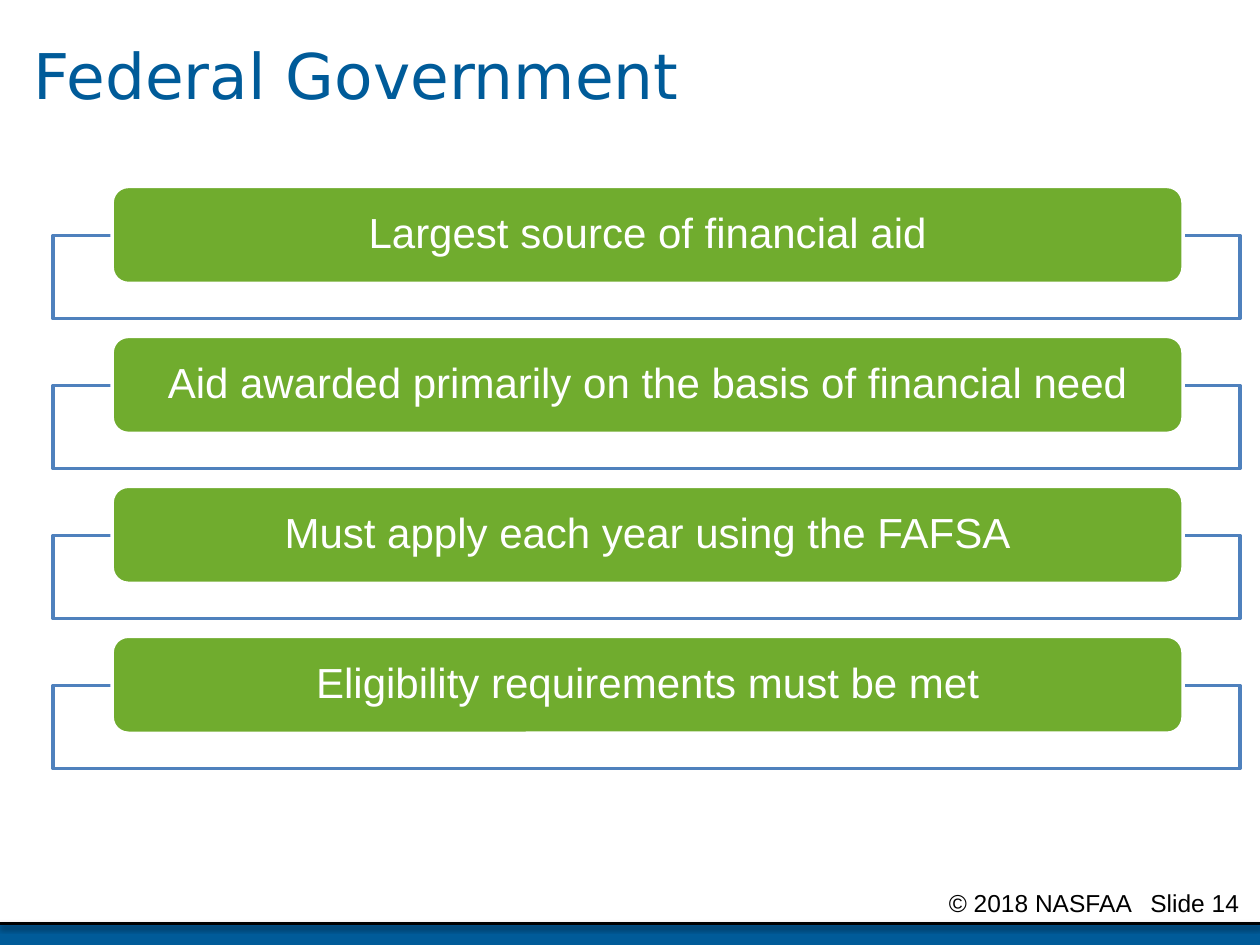
from dataclasses import dataclass

from lxml import etree
from pptx import Presentation
from pptx.dml.color import RGBColor
from pptx.enum.shapes import MSO_CONNECTOR, MSO_SHAPE
from pptx.enum.text import MSO_ANCHOR, PP_ALIGN
from pptx.oxml import parse_xml
from pptx.oxml.ns import nsdecls, qn
from pptx.util import Inches, Pt

RECT, ROUND = MSO_SHAPE.RECTANGLE, MSO_SHAPE.ROUNDED_RECTANGLE
STRAIGHT = MSO_CONNECTOR.STRAIGHT
TOP, MIDDLE = MSO_ANCHOR.TOP, MSO_ANCHOR.MIDDLE
LEFT, CENTER = PP_ALIGN.LEFT, PP_ALIGN.CENTER


@dataclass(frozen=True)
class Theme:
    blue: str = "005B99"
    green: str = "70AC2E"
    frame: str = "4F81BD"
    white: str = "FFFFFF"
    black: str = "000000"
    head: str = "DejaVu Sans"
    body: str = "Arial"
    title: int = 36
    label: int = 24
    foot: int = 14
    rule: int = 2


theme = Theme()


def add_box(kind, x, y, w, h, fill, line=None):
    box = slide.shapes.add_shape(kind, Inches(x), Inches(y), Inches(w), Inches(h))
    box.shadow.inherit = False
    box.fill.solid()
    box.fill.fore_color.rgb = RGBColor.from_string(fill)
    if line:
        box.line.color.rgb = RGBColor.from_string(line)
        box.line.width = Pt(theme.rule)
    else:
        box.line.fill.background()
    return box


def set_text(shape, text, font, size, color, align, anchor, inset, spacing=1.0):
    """Write one paragraph; inset is left, top, right, bottom in inches."""
    frame = shape.text_frame
    left, top, right, bottom = map(Inches, inset)
    layout = {"word_wrap": True, "vertical_anchor": anchor,
              "margin_left": left, "margin_top": top,
              "margin_right": right, "margin_bottom": bottom}
    for name, value in layout.items():
        setattr(frame, name, value)
    para = frame.paragraphs[0]
    para.alignment, para.line_spacing = align, spacing
    run = para.add_run()
    run.text = text
    for name, value in {"name": font, "size": Pt(size)}.items():
        setattr(run.font, name, value)
    run.font.color.rgb = RGBColor.from_string(color)
    return para


deck = Presentation()
deck.slide_width, deck.slide_height = Inches(10), Inches(7.5)
slide = deck.slides.add_slide(deck.slide_layouts[6])

# Footer band, rule and copyright
add_box(RECT, 0, 7.33, 10, 0.2, theme.blue)
rule = slide.shapes.add_connector(STRAIGHT, 0, Inches(7.33), Inches(10), Inches(7.33))
rule.line.color.rgb = RGBColor.from_string(theme.black)
rule.line.width = Pt(theme.rule)
rule.element.spPr.append(parse_xml(
    f'<a:effectLst {nsdecls("a")}>'
    f'<a:outerShdw blurRad="{Pt(3.1)}" dist="{Pt(1.6)}" dir="5400000" rotWithShape="0">'
    f'<a:srgbClr val="{theme.black}"><a:alpha val="38000"/></a:srgbClr>'
    '</a:outerShdw></a:effectLst>'))

foot = slide.shapes.add_textbox(Inches(6.25), Inches(7), Inches(3.75), Inches(0.25))
para = set_text(foot, "© 2018 NASFAA\tSlide 14", theme.body, theme.foot, theme.black,
                LEFT, TOP, (1.28, 0.05, 0.1, 0.05))
tabs = etree.SubElement(para._p.get_or_add_pPr(), qn("a:tabLst"))
etree.SubElement(tabs, qn("a:tab"), pos=str(Inches(1.6)), algn="l")

# Title
title = slide.shapes.add_textbox(Inches(0.17), 0, Inches(9.67), Inches(1.25))
set_text(title, "Federal Government", theme.head, theme.title, theme.blue,
         LEFT, MIDDLE, (0.1, 0.05, 0.1, 0.05), 0.9)

# Facts: a green bar over an outlined frame
facts = [
    "Largest source of financial aid",
    "Aid awarded primarily on the basis of financial need",
    "Must apply each year using the FAFSA",
    "Eligibility requirements must be met",
]
for i, fact in enumerate(facts):
    y = 1.48 + 1.19 * i
    frame = add_box(RECT, 0.42, y + 0.39, 9.42, 0.66, theme.white, theme.frame)
    tint = frame.fill._xPr.find(qn("a:solidFill"))[0]
    etree.SubElement(tint, qn("a:alpha"), val="90000")
    bar = add_box(ROUND, 0.89, y, 8.5, 0.77, theme.green, theme.white)
    set_text(bar, fact, theme.body, theme.label, theme.white,
             CENTER, MIDDLE, (0.25, 0, 0.25, 0), 0.9)

deck.save("out.pptx")
